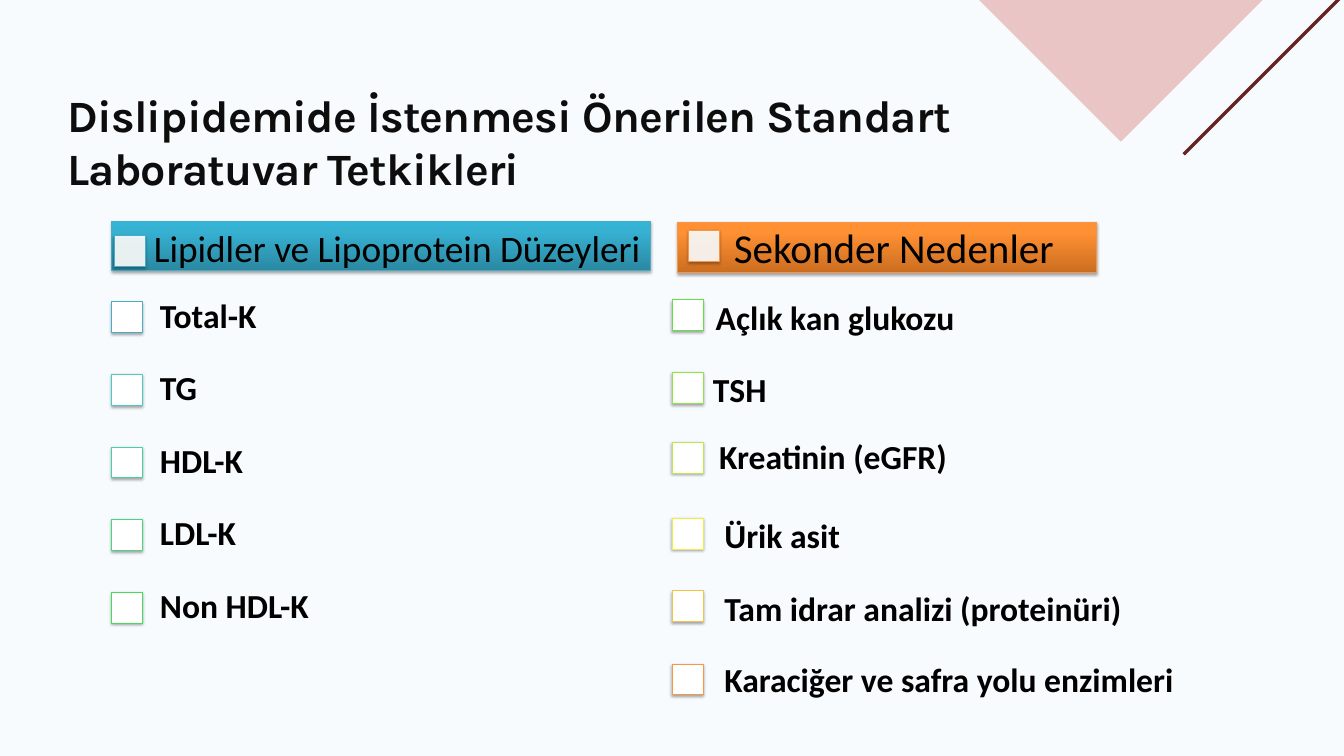
"""Build the slide on standard laboratory tests for dyslipidemia."""
from copy import deepcopy

from lxml import etree
from pptx import Presentation
from pptx.dml.color import RGBColor
from pptx.enum.shapes import MSO_SHAPE
from pptx.enum.text import MSO_ANCHOR
from pptx.oxml.ns import qn
from pptx.util import Inches, Pt

RECT = MSO_SHAPE.RECTANGLE
MIDDLE = MSO_ANCHOR.MIDDLE
TOP = MSO_ANCHOR.TOP

BACK = RGBColor(0xF8, 0xFB, 0xFD)
PINK = RGBColor(0xE6, 0xB9, 0xB8)
MAROON = RGBColor(0x63, 0x25, 0x23)
INK = RGBColor(0x0D, 0x0D, 0x0D)
BLACK = RGBColor(0, 0, 0)
WHITE = RGBColor(0xFF, 0xFF, 0xFF)
BLUE = RGBColor(0x4B, 0xAC, 0xC6)
ORANGE = RGBColor(0xF7, 0x96, 0x46)
BLUES = [RGBColor(0x2A, 0x88, 0xA2), RGBColor(0x37, 0xB1, 0xD2), RGBColor(0x34, 0xB4, 0xD6)]
ORANGES = [RGBColor(0xCC, 0x6E, 0x20), RGBColor(0xFF, 0x90, 0x34), RGBColor(0xFF, 0x91, 0x36)]
TEAL = RGBColor(0x4A, 0xCC, 0xC3)
MINT = RGBColor(0x49, 0xD1, 0xA3)
JADE = RGBColor(0x48, 0xD7, 0x7E)
GREEN = RGBColor(0x47, 0xDC, 0x57)
GRASS = RGBColor(0x60, 0xE1, 0x46)
LIME = RGBColor(0x8D, 0xE6, 0x46)
PEAR = RGBColor(0xBC, 0xEA, 0x46)
YELLOW = RGBColor(0xEE, 0xEF, 0x46)
GOLD = RGBColor(0xF3, 0xC4, 0x46)

SIDE = 0.46
STEP = 1.08

deck = Presentation()
deck.slide_width = Inches(20)
deck.slide_height = Inches(11.25)
slide = deck.slides.add_slide(deck.slide_layouts[6])
slide.background.fill.solid()
slide.background.fill.fore_color.rgb = BACK


def add_box(left, top, width, height, fill, line=None, alpha=100):
    """Add a rectangle; one with a line also casts a soft shadow."""
    box = slide.shapes.add_shape(RECT, Inches(left), Inches(top), Inches(width), Inches(height))
    box.shadow.inherit = False
    props = box._element.spPr
    if isinstance(fill, list):
        box.fill.gradient()
        box.fill.gradient_angle = 90
        stops = props.find(".//" + qn("a:gsLst"))
        stops.append(deepcopy(stops[0]))
        for stop, place, color in zip(box.fill.gradient_stops, (0, 0.8, 1), fill):
            stop.position = place
            stop.color.rgb = color
    else:
        box.fill.solid()
        box.fill.fore_color.rgb = fill
    if alpha < 100:
        color = props.find(qn("a:solidFill"))[0]
        etree.SubElement(color, qn("a:alpha"), val=str(alpha * 1000))
    if line is None:
        box.line.fill.background()
        return box
    box.line.color.rgb = line
    box.line.width = Pt(0.75)
    shade = etree.SubElement(props.find(qn("a:effectLst")), qn("a:outerShdw"), blurRad="40000",
                             dist="23000", dir="5400000", rotWithShape="0")
    color = etree.SubElement(shade, qn("a:srgbClr"), val=str(BLACK))
    etree.SubElement(color, qn("a:alpha"), val="35000")
    return box


def add_text(left, top, width, height, text, size, pad, bold=True,
             color=BLACK, face="Calibri", anchor=MIDDLE, space=0.9):
    """Add a one-run text box and return the run."""
    frame = slide.shapes.add_textbox(
        Inches(left), Inches(top), Inches(width), Inches(height)).text_frame
    frame.word_wrap = True
    frame.vertical_anchor = anchor
    frame.margin_left = frame.margin_right = Inches(pad[0])
    frame.margin_top = frame.margin_bottom = Inches(pad[1])
    line = frame.paragraphs[0]
    line.line_spacing = space
    run = line.add_run()
    run.text = text
    run.font.name = face
    run.font.size = Pt(size)
    run.font.bold = bold
    run.font.color.rgb = color
    return run


add_box(14.82, -2.38, 3.72, 3.72, PINK, alpha=80).rotation = 315
add_box(16.4, -0.66, 8.29, 0.05, MAROON).rotation = 315
title = add_text(1, 1.3, 15.2, 1.62,
                 "Dislipidemide İstenmesi Önerilen Standart Laboratuvar Tetkikleri",
                 48, (0, 0), color=INK, face="Karla", anchor=TOP, space=None)
title.font._element.set("spc", "-80")

add_box(1.66, 3.29, 8.02, 0.74, BLUES, BLUE)
add_box(1.7, 3.51, SIDE, SIDE, WHITE, BLUE, 90)
add_text(2.21, 3.06, 8.36, 1.34, "Lipidler ve Lipoprotein Düzeyleri", 40, (0.08, 0.06), False)

add_box(10.08, 3.31, 6.23, 0.74, ORANGES, ORANGE)
add_box(10.25, 3.43, SIDE, SIDE, WHITE, ORANGE, 90)
add_text(10.83, 3.06, 9.49, 1.34, "Sekonder Nedenler", 44, (0.09, 0.06), False)

lipids = [("Total-K", BLUE), ("TG", TEAL), ("HDL-K", MINT), ("LDL-K", JADE), ("Non HDL-K", GREEN)]
for row, (name, color) in enumerate(lipids):
    top = 4.49 + row * STEP
    add_box(1.66, top, SIDE, SIDE, WHITE, color)
    add_text(2.1, top - 0.31, 5.88, STEP, name, 36, (0.28, 0.28))

causes = [
    ("Açlık kan glukozu", GRASS, 4.46, 10.37, 4.21, 5.88),
    ("TSH", LIME, 5.54, 10.33, 5.29, 5.88),
    ("Kreatinin (eGFR)", PEAR, 6.58, 10.42, 6.29, 5.88),
    ("Ürik asit", YELLOW, 7.71, 10.5, 7.46, 5.88),
    ("Tam idrar analizi (proteinüri)", GOLD, 8.79, 10.5, 8.54, 6.74),
    ("Karaciğer ve safra yolu enzimleri", ORANGE, 9.88, 10.5, 9.6, 8.21),
]
for name, color, mark, left, top, width in causes:
    add_box(10, mark, SIDE, SIDE, WHITE, color)
    add_text(left, top, width, STEP, name, 36, (0.28, 0.28))

deck.save("out.pptx")
